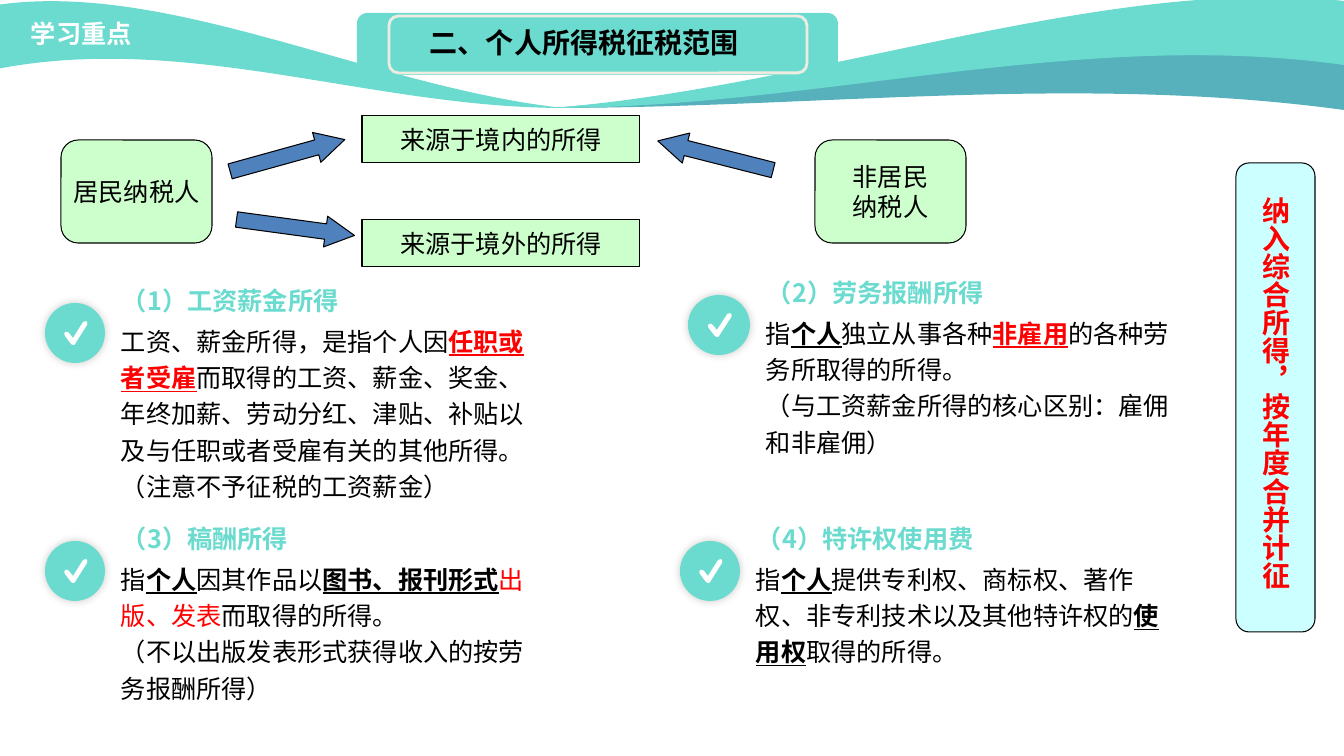
from dataclasses import dataclass

from lxml.etree import SubElement
from pptx import Presentation
from pptx.dml.color import RGBColor
from pptx.enum.shapes import MSO_SHAPE
from pptx.enum.text import MSO_ANCHOR, PP_ALIGN
from pptx.oxml.ns import qn
from pptx.util import Pt

SLIDE_WIDTH, SLIDE_HEIGHT = 1344, 756
EMU_PER_PX = 12192000 / SLIDE_WIDTH


@dataclass(frozen=True)
class Theme:
    """Colours, fonts and type sizes of the slide."""
    teal: str = "6BDBCF"
    deep_teal: str = "56B1BC"
    mint: str = "CCFFCC"
    ice: str = "CCFFFF"
    blue: str = "4F81BD"
    cream: str = "EEECE1"
    red: str = "FF0000"
    black: str = "000000"
    white: str = "FFFFFF"
    latin: str = "Arial"
    chinese: str = "Noto Sans CJK SC"
    text_size: int = 18
    title_size: int = 20


THEME = Theme()
EMPHASIS = {
    "plain": (THEME.black, False),
    "key": (THEME.black, True),
    "alert": (THEME.red, True),
    "red": (THEME.red, False),
}
CARDS = [
    ((45, 303, 60, 60), 428, "（1）工资薪金所得", [
        [("工资、薪金所得，是指个人因", "plain"), ("任职或者受雇", "alert"),
         ("而取得的工资、薪金、奖金、年终加薪、劳动分红、津贴、补贴以及与任职或者受雇有关的其他所得。", "plain")],
        [("（注意不予征税的工资薪金）", "plain")]]),
    ((688, 295, 62, 60), 448, "（2）劳务报酬所得", [
        [("指", "plain"), ("个人", "key"), ("独立从事各种", "plain"),
         ("非雇用", "alert"), ("的各种劳务所取得的所得。", "plain")],
        [("（与工资薪金所得的核心区别：雇佣和非雇佣）", "plain")]]),
    ((45, 541, 60, 60), 428, "（3）稿酬所得", [
        [("指", "plain"), ("个人", "key"), ("因其作品以", "plain"),
         ("图书、报刊形式", "key"), ("出版、发表", "red"), ("而取得的所得。", "plain")],
        [("（不以出版发表形式获得收入的按劳务报酬所得）", "plain")]]),
    ((680, 541, 60, 60), 428, "（4）特许权使用费", [
        [("指", "plain"), ("个人", "key"),
         ("提供专利权、商标权、著作权、非专利技术以及其他特许权的", "plain"),
         ("使用权", "key"), ("取得的所得。", "plain")]]),
]


def px(length):
    """Turn px into whole EMU."""
    return round(length * EMU_PER_PX)


def paint(shape, fill, line=None, weight=0.75):
    """Give a shape its fill and outline, without a shadow."""
    shape.shadow.inherit = False
    shape.fill.solid()
    shape.fill.fore_color.rgb = RGBColor.from_string(fill)
    if line:
        shape.line.color.rgb = RGBColor.from_string(line)
        shape.line.width = Pt(weight)
    else:
        shape.line.fill.background()


def add_box(slide, kind, box, fill, line=None, weight=0.75):
    """Add a painted preset shape."""
    shape = slide.shapes.add_shape(kind, *map(px, box))
    paint(shape, fill, line, weight)
    return shape


def add_outline(slide, box, start, segments, fill):
    """Add a closed outline of lines (one point) and cubic curves (three points)."""
    left, top, width, height = map(px, box)
    builder = slide.shapes.build_freeform(left, top)
    builder.add_line_segments([(left + width, top), (left + width, top + height), (left, top + height)])
    shape = builder.convert_to_shape()
    outline = next(shape._element.iter(qn("a:path")))
    for child in list(outline):
        outline.remove(child)
    for tag, points in [("a:moveTo", [start])] + [
            ("a:lnTo" if len(points) == 1 else "a:cubicBezTo", points) for points in segments]:
        command = SubElement(outline, qn(tag))
        for x, y in points:
            SubElement(command, qn("a:pt"), x=str(px(x) - left), y=str(px(y) - top))
    SubElement(outline, qn("a:close"))
    paint(shape, fill)


def style_run(run, color, bold, size=THEME.text_size, font=THEME.latin):
    """Set the type of one run."""
    run.font.size = Pt(size)
    run.font.bold = bold
    run.font.color.rgb = RGBColor.from_string(color)
    run.font.name = font
    SubElement(run.font._element, qn("a:ea")).set("typeface", THEME.chinese)


def add_label(slide, box, text, color, size=THEME.text_size, font=THEME.latin):
    """Add a wrapped text box holding one bold line."""
    label = slide.shapes.add_textbox(*map(px, box))
    label.text_frame.word_wrap = True
    label.text_frame.text = text
    style_run(label.text_frame.paragraphs[0].runs[0], color, True, size, font)
    return label


def draw_waves(slide, left, top):
    """Draw the header waves, each between an upper and a lower curve."""
    waves = [
        (THEME.deep_teal, (553, 40, 791, 70), (553, 108),
         [[(818, 87), (1106, 20), (1344, 46)], [(1344, 110)], [(1079, 74), (818, 108), (553, 108)]]),
        (THEME.teal, (552, -3, 792, 111), (552, 108),
         [[(818, 87), (1106, -25), (1344, 1)], [(1344, 65)], [(1079, 28), (818, 108), (552, 108)]]),
        (THEME.teal, (-3, 1, 566, 107), (563, 108),
         [[(372, 87), (169, -20), (-3, 5)], [(-3, 69)], [(188, 32), (372, 108), (563, 108)]]),
    ]
    for fill, (x, y, width, height), start, segments in waves:
        moved = [[(left + a, top + b) for a, b in points] for points in segments]
        add_outline(slide, (left + x, top + y, width, height),
                    (left + start[0], top + start[1]), moved, fill)
    add_label(slide, (left + 21, top + 13, 191, 40), "学习重点", THEME.white, font=THEME.chinese)


def draw_title(slide, left, top, width, height):
    """Draw the title plate with its inner frame."""
    plate = MSO_SHAPE.ROUNDED_RECTANGLE
    add_box(slide, plate, (left, top, width, height), THEME.teal)
    add_box(slide, plate, (left + 32, top + 3, width - 63, height - 5), THEME.teal, THEME.cream, 2)
    add_label(slide, (left + 63, top + 8, width - 126, 78), "二、个人所得税征税范围",
              THEME.black, THEME.title_size)


def draw_check(slide, left, top, width, height):
    """Draw a softly shadowed disc with a check mark."""
    disc = add_box(slide, MSO_SHAPE.OVAL, (left, top, width, height), THEME.teal)
    effects = disc._element.spPr.find(qn("a:effectLst"))
    shadow = SubElement(effects, qn("a:outerShdw"), blurRad=str(Pt(6)), dist="0", dir="18900000")
    color = SubElement(shadow, qn("a:srgbClr"), val=THEME.black)
    SubElement(color, qn("a:alpha"), val="20000")
    mark = [[(27, 42), (27, 42), (26, 41)], [(20, 33)], [(19, 32), (19, 30), (20, 29)],
            [(22, 28), (23, 29), (24, 30)], [(28, 35)], [(38, 19)],
            [(39, 18), (40, 18), (41, 18)], [(42, 19), (43, 20), (42, 22)],
            [(30, 41)], [(30, 42), (29, 42), (28, 42)]]
    moved = [[(left + x * width / 60, top + y * height / 60) for x, y in points] for points in mark]
    add_outline(slide, (left + 19 * width / 60, top + 18 * height / 60, 24 * width / 60, 24 * height / 60),
                moved[-1][-1], moved, THEME.white)


def draw_card(slide, disc, body_width, heading, paragraphs):
    """Draw one kind of income beside its check disc."""
    left, top, width, height = disc
    right = left + width
    draw_check(slide, *disc)
    body = slide.shapes.add_textbox(*map(px, (right + 6, top + 12, body_width, 37 * 4)))
    frame = body.text_frame
    frame.word_wrap = True
    for index, pieces in enumerate(paragraphs):
        paragraph = frame.add_paragraph() if index else frame.paragraphs[0]
        paragraph.line_spacing = 1.2
        paragraph._p.get_or_add_pPr().set("hangingPunct", "0")
        for text, emphasis in pieces:
            run = paragraph.add_run()
            run.text = text
            color, bold = EMPHASIS[emphasis]
            style_run(run, color, bold)
            run.font.underline = bold
    label = add_label(slide, (right - 3, top - 28, 335, 50), heading, THEME.teal, font=THEME.chinese)
    label.text_frame.margin_left = label.text_frame.margin_right = px(20)
    label.text_frame.margin_top = label.text_frame.margin_bottom = px(10)


def draw_sources(slide, left, top):
    """Draw the taxpayers and arrows to their sources of income."""
    nodes = [
        (MSO_SHAPE.ROUNDED_RECTANGLE, (0, 24, 151, 103), "居民纳税人"),
        (MSO_SHAPE.RECTANGLE, (301, 0, 278, 47), "来源于境内的所得"),
        (MSO_SHAPE.RECTANGLE, (301, 104, 278, 47), "来源于境外的所得"),
        (MSO_SHAPE.ROUNDED_RECTANGLE, (754, 24, 151, 103), "非居民\n纳税人"),
    ]
    for kind, (x, y, width, height), text in nodes:
        node = add_box(slide, kind, (left + x, top + y, width, height), THEME.mint, THEME.black)
        frame = node.text_frame
        frame.text = text
        frame.word_wrap = False
        frame.vertical_anchor = MSO_ANCHOR.MIDDLE
        for paragraph in frame.paragraphs:
            paragraph.alignment = PP_ALIGN.CENTER
            style_run(paragraph.runs[0], THEME.black, False)
    for x, y, angle in [(167, 24, 344.5), (175, 96, 7.7), (595, 24, 194.2)]:
        arrow = add_box(slide, MSO_SHAPE.RIGHT_ARROW, (left + x, top + y, 119, 31),
                        THEME.blue, THEME.black)
        arrow.adjustments[1] = 0.94
        arrow.rotation = angle


def draw_side_note(slide, left, top, width, height):
    """Draw the vertical note at the right edge."""
    add_box(slide, MSO_SHAPE.ROUNDED_RECTANGLE, (left, top, width, height), THEME.ice, THEME.black)
    note = add_label(slide, (left + 8, top + 24, 53, height - 40),
                     "纳入综合所得，按年度合并计征", THEME.red, THEME.title_size)
    note.text_frame._txBody.bodyPr.set("vert", "eaVert")


def main():
    """Build and save the slide."""
    presentation = Presentation()
    presentation.slide_width, presentation.slide_height = px(SLIDE_WIDTH), px(SLIDE_HEIGHT)
    slide = presentation.slides.add_slide(presentation.slide_layouts[6])
    draw_waves(slide, 0, 0)
    for card in CARDS:
        draw_card(slide, *card)
    draw_title(slide, 357, 13, 481, 62)
    draw_sources(slide, 61, 116)
    draw_side_note(slide, 1236, 163, 79, 469)
    presentation.save("out.pptx")


if __name__ == "__main__":
    main()
